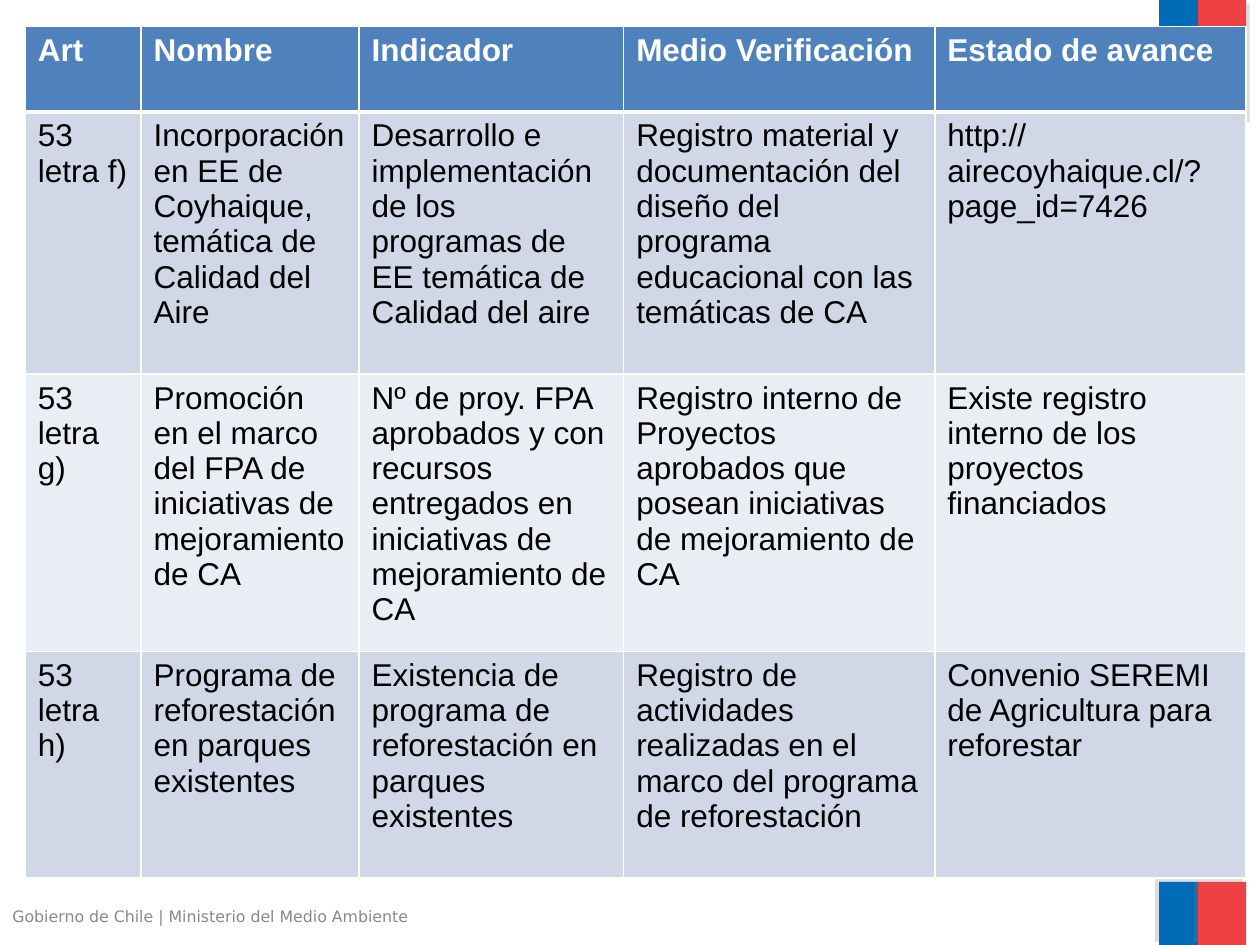
from lxml import etree
from pptx import Presentation
from pptx.dml.color import RGBColor
from pptx.enum.shapes import MSO_SHAPE
from pptx.oxml import parse_xml
from pptx.oxml.ns import nsdecls, qn
from pptx.util import Inches, Pt

RECT = MSO_SHAPE.RECTANGLE
COLORS = {"blue": "006CB7", "red": "EF4144", "shadow": "808080", "footer": "898989",
          "header": "4F81BD", "odd": "D0D8E8", "even": "E9EDF4",
          "white": "FFFFFF", "black": "000000"}


def rgb(name):
    return RGBColor.from_string(COLORS[name])


def write(tf, text, color, **fmt):
    r = tf.paragraphs[0].add_run()
    r.text = text
    r.font.color.rgb = rgb(color)
    for name, value in fmt.items():
        setattr(r.font, name, value)


prs = Presentation()
prs.slide_width, prs.slide_height = Inches(10), Inches(7.5)
s = prs.slides.add_slide(prs.slide_layouts[6])

# Two-colour bands at the top and bottom right, with a hard shadow
for top, height, angle in [(0, 0.94, 45), (7, 0.5, 215)]:
    for color, left, width in [("blue", 9.2, 0.31), ("red", 9.51, 0.38)]:
        sp = s.shapes.add_shape(RECT, Inches(left), Inches(top), Inches(width), Inches(height))
        sp.fill.solid()
        sp.fill.fore_color.rgb = rgb(color)
        sp.line.fill.background()
        sp.shadow.inherit = False
        effects = sp._element.spPr.find(qn("a:effectLst"))
        effects.append(parse_xml(
            f'<a:outerShdw {nsdecls("a")} blurRad="0" dist="{Pt(3)}" dir="{angle * 60000}" '
            f'algn="ctr" rotWithShape="0"><a:srgbClr val="{COLORS["shadow"]}">'
            '<a:alpha val="25000"/></a:srgbClr></a:outerShdw>'))

# Footer
tf = s.shapes.add_textbox(Inches(0), Inches(7.15), Inches(3.48), Inches(0.27)).text_frame
tf.word_wrap = True
write(tf, "Gobierno de Chile | Ministerio del Medio Ambiente", "footer",
      size=Pt(9), name="DejaVu Sans")

# Progress table
rows = [
    ["Art", "Nombre", "Indicador", "Medio Verificación", "Estado de avance"],
    ["53 letra f)",
     "Incorporación en EE de Coyhaique, temática de Calidad del Aire",
     "Desarrollo e implementación de los programas de EE temática de Calidad del aire",
     "Registro material y documentación del diseño del programa educacional con las temáticas de CA",
     "http://airecoyhaique.cl/?page_id=7426"],
    ["53 letra g)",
     "Promoción en el marco del FPA de iniciativas de mejoramiento de CA",
     "Nº de proy. FPA aprobados y con recursos entregados en iniciativas de mejoramiento de CA",
     "Registro interno de Proyectos aprobados que posean iniciativas de mejoramiento de CA",
     "Existe registro interno de los proyectos financiados"],
    ["53 letra h)",
     "Programa de reforestación en parques existentes",
     "Existencia de programa de reforestación en parques existentes",
     "Registro de actividades realizadas en el marco del programa de reforestación",
     "Convenio SEREMI de Agricultura para reforestar"],
]
col_widths = [0.92, 1.73, 2.1, 2.47, 2.47]
row_heights = [0.68, 2.08, 2.06, 1.8]
table = s.shapes.add_table(len(rows), len(col_widths), Inches(0.2), Inches(0.21),
                           Inches(sum(col_widths)), Inches(sum(row_heights))).table
for col, width in zip(table.columns, col_widths):
    col.width = Inches(width)
for row, height in zip(table.rows, row_heights):
    row.height = Inches(height)

for i, texts in enumerate(rows):
    is_header = i == 0
    fill = "header" if is_header else "odd" if i % 2 else "even"
    for j, text in enumerate(texts):
        cell = table.cell(i, j)
        write(cell.text_frame, text, "white" if is_header else "black",
              size=Pt(18), name="Arial", bold=is_header)
        cell.fill.solid()
        cell.fill.fore_color.rgb = rgb(fill)
        # White borders, thicker under the header; they come before the fill
        tcPr = cell._tc.get_or_add_tcPr()
        for k, side in enumerate(["lnL", "lnR", "lnT", "lnB"]):
            thick = (i, side) in [(0, "lnB"), (1, "lnT")]
            ln = etree.Element(qn(f"a:{side}"), w=str(Pt(3 if thick else 1)))
            line_fill = etree.SubElement(ln, qn("a:solidFill"))
            etree.SubElement(line_fill, qn("a:srgbClr"), val=COLORS["white"])
            tcPr.insert(k, ln)

prs.save("out.pptx")
